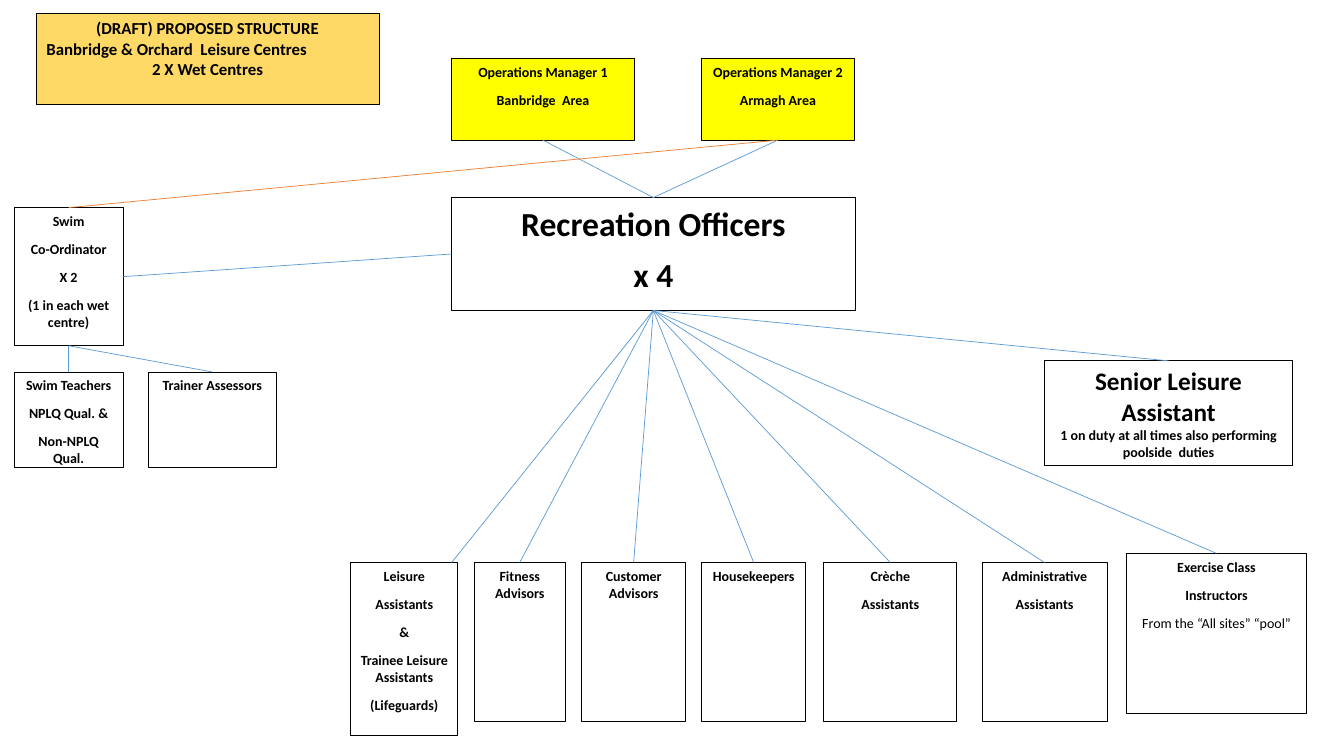
from lxml import etree
from pptx import Presentation
from pptx.dml.color import RGBColor
from pptx.enum.shapes import MSO_CONNECTOR, MSO_SHAPE
from pptx.enum.text import MSO_ANCHOR, MSO_AUTO_SIZE, PP_ALIGN
from pptx.oxml.ns import qn
from pptx.util import Pt

RECTANGLE = MSO_SHAPE.RECTANGLE
STRAIGHT = MSO_CONNECTOR.STRAIGHT
TOP_ANCHOR = MSO_ANCHOR.TOP
NO_AUTOFIT = MSO_AUTO_SIZE.NONE
LEFT, CENTER = PP_ALIGN.LEFT, PP_ALIGN.CENTER

# Connection sites of a rectangle
TOP, LEFT_SIDE, BOTTOM, RIGHT_SIDE = range(4)

TITLE_ONLY = 5
EMU_PER_PX = 9144  # 100 px to the inch
FONT = "Calibri"
COLORS = {
    "black": "000000",
    "white": "FFFFFF",
    "gold": "FFD966",
    "yellow": "FFFF00",
    "blue": "5B9BD5",
    "orange": "ED7D31",
}

# Staff groups under the recreation officers: left, top, width, height, lines
STAFF = [
    (348, 558, 106, 172, ["Leisure", "Assistants", "&",
                          "Trainee Leisure Assistants", "(Lifeguards)"]),
    (470, 558, 91, 158, ["Fitness Advisors"]),
    (577, 558, 103, 158, ["Customer Advisors"]),
    (696, 558, 103, 158, ["Housekeepers"]),
    (817, 558, 132, 158, ["Crèche", "Assistants"]),
    (974, 558, 124, 158, ["Administrative", "Assistants"]),
    (1117, 549, 179, 159, ["Exercise Class", "Instructors",
                           "From the “All sites” “pool”"]),
]


def px(length):
    return length * EMU_PER_PX


def rgb(name):
    return RGBColor.from_string(COLORS[name])


def style_box(shape, fill, line_width):
    if fill:
        shape.fill.solid()
        shape.fill.fore_color.rgb = rgb(fill)
    else:
        shape.fill.background()
    shape.line.color.rgb = rgb("black")
    shape.line.width = Pt(line_width)


def write_lines(shape, lines, size, space_after):
    frame = shape.text_frame
    frame.word_wrap = True
    frame.auto_size = NO_AUTOFIT
    frame.vertical_anchor = TOP_ANCHOR
    frame.text = "\n".join(lines)
    for paragraph in frame.paragraphs:
        paragraph.alignment = CENTER
        paragraph.space_before = Pt(0)
        paragraph.space_after = Pt(space_after)
        font = paragraph.font
        font.name, font.size, font.bold = FONT, Pt(size), True
        font.color.rgb = rgb("black")


def add_box(slide, left, top, width, height, lines, fill="white",
            size=10, space_after=8, line_width=0.5):
    shape = slide.shapes.add_shape(RECTANGLE, px(left), px(top), px(width), px(height))
    shape.shadow.inherit = False
    style_box(shape, fill, line_width)
    write_lines(shape, lines, size, space_after)
    return shape


def add_title(slide):
    title = slide.shapes.title
    title.left, title.top, title.width, title.height = px(36), px(13), px(340), px(91)
    style_box(title, "gold", 0.75)
    write_lines(title, ["(DRAFT) PROPOSED STRUCTURE",
                        "Banbridge & Orchard  Leisure Centres",
                        "2 X Wet Centres"], 12, 0)
    title.text_frame.paragraphs[1].alignment = LEFT


def link(slide, start, start_site, end, end_site, color="blue"):
    connector = slide.shapes.add_connector(STRAIGHT, 0, 0, 0, 0)
    connector.begin_connect(start, start_site)
    connector.end_connect(end, end_site)
    connector.line.color.rgb = rgb(color)
    connector.line.width = Pt(0.5)
    etree.SubElement(connector.element.spPr, qn("a:effectLst"))
    return connector


def main():
    presentation = Presentation()
    presentation.slide_width, presentation.slide_height = px(1333), px(750)
    slide = presentation.slides.add_slide(presentation.slide_layouts[TITLE_ONLY])
    add_title(slide)

    # Managers and recreation officers
    banbridge = add_box(slide, 448, 58, 181, 81,
                        ["Operations Manager 1", "Banbridge  Area"], "yellow")
    armagh = add_box(slide, 696, 58, 151, 81,
                     ["Operations Manager 2", "Armagh Area"], "yellow")
    officers = add_box(slide, 448, 196, 400, 112,
                       ["Recreation Officers", "x 4"], size=24)
    for manager in (banbridge, armagh):
        link(slide, manager, BOTTOM, officers, TOP)

    # Swimming branch
    coordinator = add_box(slide, 14, 206, 108, 137,
                          ["Swim", "Co-Ordinator", "X 2", "(1 in each wet centre)"])
    teachers = add_box(slide, 14, 369, 108, 95,
                       ["Swim Teachers", "NPLQ Qual. &", "Non-NPLQ Qual."])
    assessors = add_box(slide, 147, 369, 127, 95, ["Trainer Assessors"])
    link(slide, armagh, BOTTOM, coordinator, TOP, "orange")
    link(slide, officers, LEFT_SIDE, coordinator, RIGHT_SIDE)
    for team in (teachers, assessors):
        link(slide, coordinator, BOTTOM, team, TOP)

    # Senior leisure assistant
    senior = add_box(slide, 1036, 358, 246, 104,
                     ["Senior Leisure Assistant",
                      "1 on duty at all times also performing poolside  duties"],
                     fill=None, space_after=0, line_width=0.75)
    senior.text_frame.paragraphs[0].font.size = Pt(18)
    link(slide, officers, BOTTOM, senior, TOP)

    # Staff groups
    groups = [add_box(slide, *group) for group in STAFF]
    links = [link(slide, officers, BOTTOM, group, TOP) for group in groups]
    groups[-1].text_frame.paragraphs[-1].font.bold = False

    # The leisure assistants' line meets their box near its right corner
    links[0].end_x = px(448)

    presentation.save("out.pptx")


if __name__ == "__main__":
    main()
